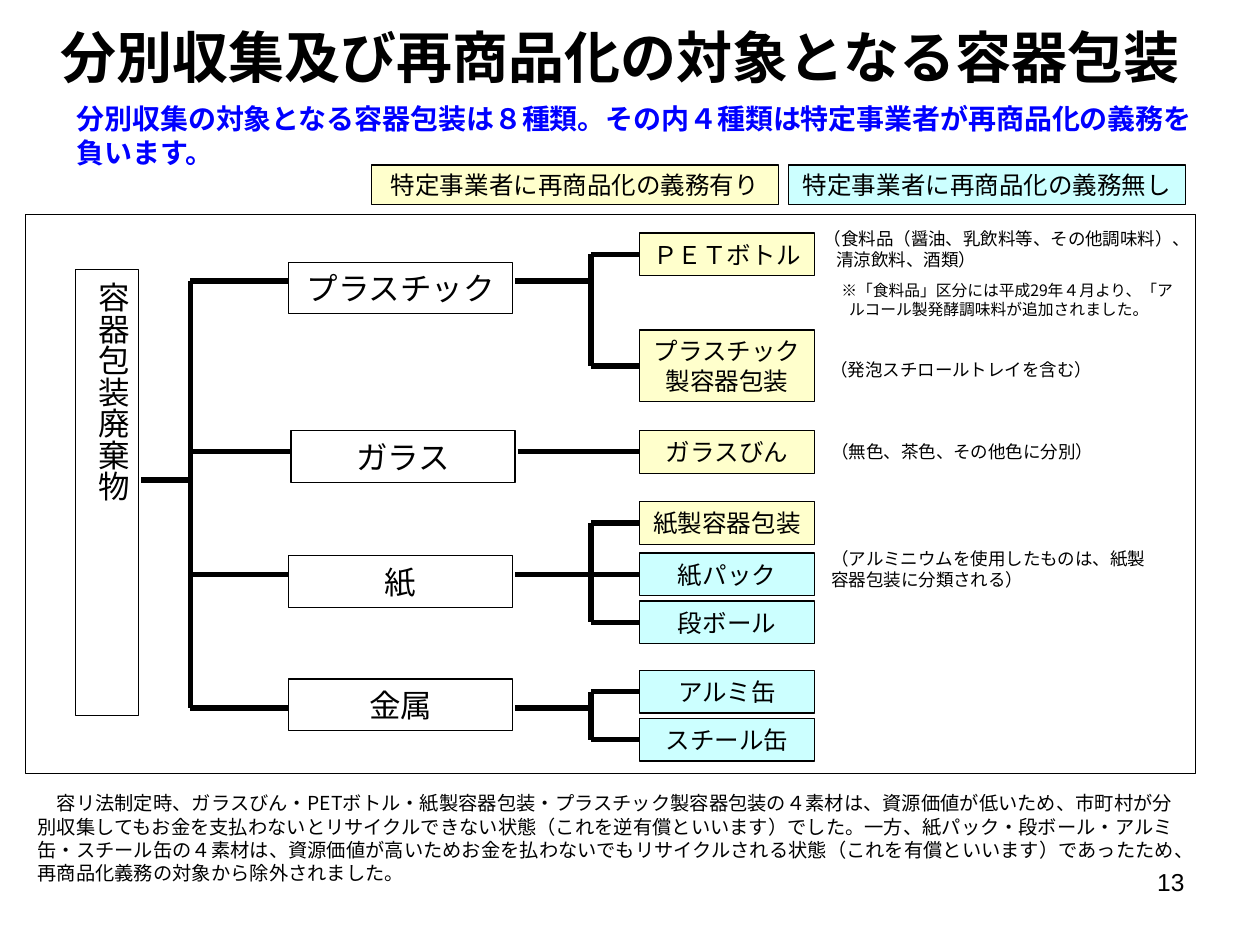
"""Build the slide on container and packaging types subject to sorted collection."""
from lxml import etree
from pptx import Presentation
from pptx.dml.color import RGBColor
from pptx.enum import lang, shapes, text
from pptx.oxml import ns
from pptx.util import Pt

BLACK = RGBColor(0, 0, 0)
WHITE = RGBColor(255, 255, 255)
BLUE = RGBColor(0, 0, 255)
YELLOW = RGBColor(255, 255, 204)
CYAN = RGBColor(204, 255, 255)
JAPANESE = "Noto Sans CJK JP"
LEFT, CENTER, RIGHT = text.PP_ALIGN.LEFT, text.PP_ALIGN.CENTER, text.PP_ALIGN.RIGHT
TOP, MIDDLE = text.MSO_ANCHOR.TOP, text.MSO_ANCHOR.MIDDLE

TRUNK_X, BRACKET_X = 108.7, 337.7
CATEGORY_RIGHT = 294.5
LEAF_LEFT, LEAF_WIDTH, LEAF_HEIGHT = 365.5, 100, 24.4

TREE = [
    ("プラスチック", 165, 149.8, 160.6, [
        ("ＰＥＴボトル", 133.2, LEAF_HEIGHT, YELLOW),
        ("プラスチック製容器包装", 188.6, 41, YELLOW)]),
    ("ガラス", 166.3, 246.2, 258.2, [("ガラスびん", 246, LEAF_HEIGHT, YELLOW)]),
    ("紙", 165, 317.5, 328.2, [
        ("紙製容器包装", 286.6, LEAF_HEIGHT, YELLOW),
        ("紙パック", 316, LEAF_HEIGHT, CYAN),
        ("段ボール", 343.4, LEAF_HEIGHT, CYAN)]),
    ("金属", 165, 388, 404.6, [
        ("アルミ缶", 383, LEAF_HEIGHT, CYAN),
        ("スチール缶", 410.4, LEAF_HEIGHT, CYAN)]),
]

NOTES = [
    ("（アルミニウムを使用したものは、紙製容器包装に分類される）", 468, 309.6, 32),
    ("（発泡スチロールトレイを含む）", 467.5, 201.6, 19.5),
    ("（無色、茶色、その他色に分別）", 468, 248.4, 19.5),
]

EXPLANATION = (
    "　容リ法制定時、ガラスびん・PETボトル・紙製容器包装・プラスチック製容器包装の４素材は、"
    "資源価値が低いため、市町村が分別収集してもお金を支払わないとリサイクルできない状態"
    "（これを逆有償といいます）でした。一方、紙パック・段ボール・アルミ缶・スチール缶の４素材は、"
    "資源価値が高いためお金を払わないでもリサイクルされる状態（これを有償といいます）であったため、"
    "再商品化義務の対象から除外されました。")


class SlideBuilder:
    def __init__(self, slide):
        self.slide = slide
        self.font_format = {"name": JAPANESE, "bold": False,
                            "language_id": lang.MSO_LANGUAGE_ID.JAPANESE}

    def add_words(self, paragraph, words, size, color=BLACK, **changes):
        run = paragraph.add_run()
        run.text = words
        for key, value in {**self.font_format, "size": Pt(size), **changes}.items():
            setattr(run.font, key, value)
        run.font.color.rgb = color
        east_asian = etree.SubElement(run.font._element, ns.qn("a:ea"))
        east_asian.set("typeface", run.font.name)

    def fill_text(self, shape, words, size, align=LEFT, anchor=TOP, **font):
        frame = shape.text_frame
        frame_format = {"word_wrap": True, "vertical_anchor": anchor,
                        "auto_size": text.MSO_AUTO_SIZE.NONE}
        for key, value in frame_format.items():
            setattr(frame, key, value)
        paragraph = frame.paragraphs[0]
        paragraph.alignment = align
        self.add_words(paragraph, words, size, **font)
        return shape

    def title(self, words, size, *bounds):
        heading = self.slide.shapes.title
        for key, value in zip(("left", "top", "width", "height"), bounds):
            setattr(heading, key, Pt(value))
        self.fill_text(heading, words, size, CENTER, bold=True)

    def label(self, words, size, *bounds, **style):
        area = self.slide.shapes.add_textbox(*map(Pt, bounds))
        return self.fill_text(area, words, size, **style)

    def box(self, words, size, *bounds, fill=WHITE, align=CENTER, anchor=MIDDLE):
        rectangle = self.slide.shapes.add_shape(
            shapes.MSO_SHAPE.RECTANGLE, *map(Pt, bounds))
        rectangle.shadow.inherit = False
        rectangle.fill.solid()
        rectangle.fill.fore_color.rgb = fill
        rectangle.line.color.rgb = BLACK
        rectangle.line.width = Pt(0.75)
        if words:
            self.fill_text(rectangle, words, size, align, anchor)
        return rectangle

    def line(self, *ends, target=None):
        connector = self.slide.shapes.add_connector(
            shapes.MSO_CONNECTOR.STRAIGHT, *map(Pt, ends))
        connector.line.color.rgb = BLACK
        connector.line.width = Pt(3)
        etree.SubElement(connector._element.spPr, ns.qn("a:effectLst"))
        if target is not None:
            connector.end_connect(target, 1)

    def branch(self, category, left, top, y, leaves):
        self.box(category, 18, left, top, 128, 29.5)
        self.line(TRUNK_X, y, left, y)
        middles = [leaf_top + height / 2 for _, leaf_top, height, _ in leaves]
        start = BRACKET_X
        if len(leaves) > 1:
            self.line(BRACKET_X, middles[0], BRACKET_X, middles[-1])
            self.line(CATEGORY_RIGHT, y, BRACKET_X, y)
        else:
            start = left + 129.5
        for (item, leaf_top, height, fill), middle in zip(leaves, middles):
            leaf = self.box(item, 14, LEAF_LEFT, leaf_top, LEAF_WIDTH, height, fill=fill)
            self.line(start, middle, LEAF_LEFT, middle, target=leaf)


def hang(paragraph, indent):
    properties = paragraph._p.get_or_add_pPr()
    properties.set("marL", str(Pt(indent)))
    properties.set("indent", str(-Pt(indent)))


def main():
    deck = Presentation()
    deck.slide_width, deck.slide_height = Pt(720), Pt(540)
    page = SlideBuilder(deck.slides.add_slide(deck.slide_layouts[5]))

    page.title("分別収集及び再商品化の対象となる容器包装", 32, 14.4, 9.4, 680.4, 45.4)
    page.label("分別収集の対象となる容器包装は８種類。その内４種類は特定事業者が再商品化の義務を負います。",
               16, 36.7, 54.7, 652.3, 46, color=BLUE, bold=True)
    page.box("", 14, 14.4, 122.4, 668.9, 319.7)
    page.box("特定事業者に再商品化の義務有り", 14, 212.4, 94.3, 232.6, 22.5, fill=YELLOW)
    page.box("特定事業者に再商品化の義務無し", 14, 450.7, 94.3, 226.8, 22.5, fill=CYAN)

    waste = page.box("容器包装廃棄物", 18, 43.2, 154, 36, 255, align=LEFT, anchor=TOP)
    waste.text_frame._txBody.bodyPr.set("vert", "eaVert")
    page.line(80.6, 274.3, TRUNK_X, 274.3)
    page.line(TRUNK_X, TREE[0][3], TRUNK_X, TREE[-1][3])
    for category in TREE:
        page.branch(*category)

    for words, left, top, height in NOTES:
        page.label(words, 10, left, top, 201, height)
    food = page.label("（食料品（醤油、乳飲料等、その他調味料）、清涼飲料、酒類）",
                      10, 463.7, 126.7, 219.6, 60.5).text_frame
    hang(food.paragraphs[0], 7.2)
    seasoning = food.add_paragraph()
    seasoning.space_before = Pt(5)
    hang(seasoning, 14.4)
    page.add_words(seasoning, "　", 10)
    page.add_words(seasoning, "※「食料品」区分には平成29年４月より、「アルコール製発酵調味料が追加されました。", 9)

    page.label(EXPLANATION, 11, 14.4, 448.6, 669.6, 60.5, anchor=MIDDLE)
    page.label("13", 14, 516.2, 491.8, 167.8, 37.4, align=RIGHT, name="Arial")
    deck.save("out.pptx")


if __name__ == "__main__":
    main()
